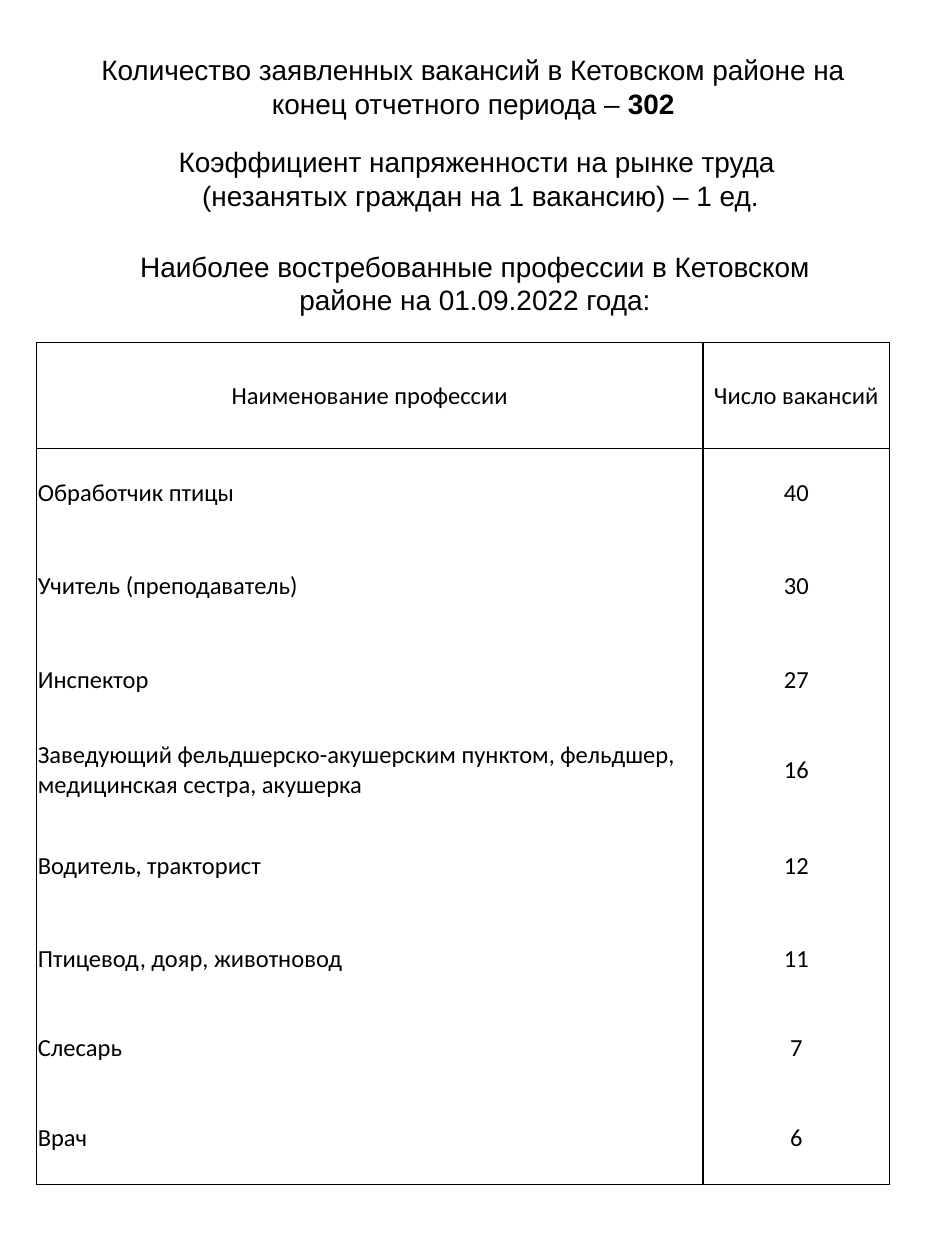
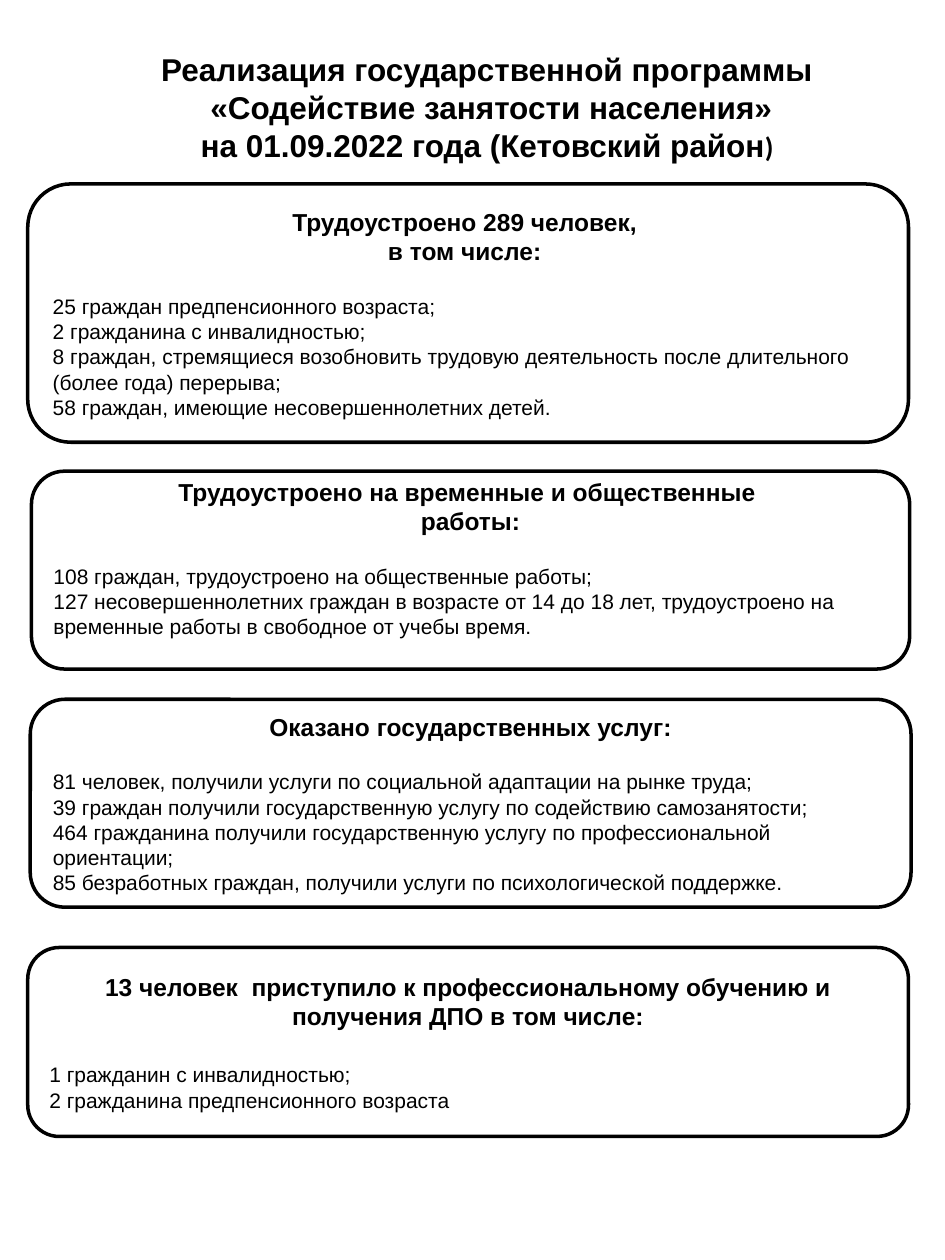
from pptx import Presentation
from pptx.dml.color import RGBColor
from pptx.enum.shapes import MSO_SHAPE
from pptx.enum.text import MSO_ANCHOR, MSO_AUTO_SIZE, PP_ALIGN
from pptx.oxml.ns import qn
from pptx.util import Inches, Pt
from lxml.etree import SubElement

BLACK = RGBColor(0x00, 0x00, 0x00)
WHITE = RGBColor(0xFF, 0xFF, 0xFF)

presentation = Presentation()
presentation.slide_width = Inches(7.5)
presentation.slide_height = Inches(10)
title_only = presentation.slide_layouts[5]

# Grid of 75 columns by 100 rows
COLUMN = presentation.slide_width // 75
ROW = presentation.slide_height // 100


def place(shape, column, row, columns, rows):
    shape.left, shape.top = int(column * COLUMN), int(row * ROW)
    shape.width, shape.height = int(columns * COLUMN), int(rows * ROW)
    text_frame = shape.text_frame
    text_frame.word_wrap = True
    text_frame.auto_size = MSO_AUTO_SIZE.NONE
    text_frame.vertical_anchor = MSO_ANCHOR.TOP
    return text_frame


def write(text_frame, index, alignment, runs):
    """Fill paragraph number index with (text, size, bold, font) runs."""
    paragraph = text_frame.paragraphs[0] if index == 0 else text_frame.add_paragraph()
    paragraph.alignment = alignment
    for text, size, bold, font in runs:
        run = paragraph.add_run()
        run.text = text
        run.font.size = Pt(size)
        run.font.bold = bold
        run.font.name = font
        run.font.color.rgb = BLACK
    return paragraph


# Slide 1: vacancies
slide = presentation.slides.add_slide(title_only)
title_frame = place(slide.shapes.title, 4.5, 3.7, 66.1, 6.4)
write(title_frame, 0, PP_ALIGN.CENTER, [
    ("Количество заявленных вакансий в Кетовском районе на конец отчетного периода – ",
     16, False, "Arial"),
    ("302", 16, True, "Arial"),
])

# Statements under the title
statements = [
    ((2.2, 11, 71.9, 6.4), ["Коэффициент напряженности на рынке труда ",
                            "(незанятых граждан на 1 вакансию) – 1 ед."]),
    ((7.8, 19.3, 59.8, 6.4), ["Наиболее востребованные профессии в Кетовском районе "
                              "на 01.09.2022 года:"]),
]
for area, lines in statements:
    statement_frame = place(slide.shapes.add_textbox(0, 0, COLUMN, ROW), *area)
    for index, line in enumerate(lines):
        write(statement_frame, index, PP_ALIGN.CENTER, [(line, 16, False, "Arial")])

# Table of professions
professions = [
    ("Наименование профессии", "Число вакансий", 8.4),
    ("Обработчик птицы", "40", 7),
    ("Учитель (преподаватель)", "30", 7.8),
    ("Инспектор", "27", 7),
    ("Заведующий фельдшерско-акушерским пунктом, фельдшер, медицинская сестра, акушерка",
     "16", 7.4),
    ("Водитель, тракторист", "12", 7.8),
    ("Птицевод, дояр, животновод", "11", 7),
    ("Слесарь", "7", 7),
    ("Врач", "6", 7.4),
]
last = len(professions) - 1
table_rows = sum(rows for _, _, rows in professions)
table = slide.shapes.add_table(
    len(professions), 2, int(2.9 * COLUMN), int(27.2 * ROW),
    int(67.7 * COLUMN), int(table_rows * ROW)).table
table.first_row = False
table.horz_banding = False
table.columns[0].width = int(52.9 * COLUMN)
table.columns[1].width = int(14.8 * COLUMN)

for row_index, (profession, vacancies, rows) in enumerate(professions):
    table.rows[row_index].height = int(rows * ROW)
    for column_index, text in enumerate((profession, vacancies)):
        cell = table.cell(row_index, column_index)
        cell.margin_left = cell.margin_right = cell.margin_top = Inches(0.01)
        cell.margin_bottom = 0
        cell.vertical_anchor = MSO_ANCHOR.MIDDLE
        centred = row_index == 0 or column_index == 1
        write(cell.text_frame, 0, PP_ALIGN.CENTER if centred else PP_ALIGN.LEFT,
              [(text, 14, False, "Calibri")])

        # Frame, header line and column lines only
        visible = {"a:lnL": True, "a:lnR": True,
                   "a:lnT": row_index <= 1, "a:lnB": row_index in (0, last)}
        properties = cell._tc.get_or_add_tcPr()
        for side, shown in visible.items():
            border = SubElement(properties, qn(side), w=str(Pt(1)))
            if shown:
                fill = SubElement(border, qn("a:solidFill"))
                SubElement(fill, qn("a:srgbClr"), val=str(BLACK))
            else:
                SubElement(border, qn("a:noFill"))
        cell.fill.background()

# Slide 2: employment programme
slide = presentation.slides.add_slide(title_only)
title_frame = place(slide.shapes.title, 5.2, 3.5, 66.9, 10.1)
title_lines = [
    [("Реализация государственной программы", 18, True, "Arial")],
    [(" «Содействие занятости населения»", 18, True, "Arial")],
    [("на 01.09.2022 года (Кетовский район", 18, True, "Arial"),
     (")", 16, True, "Calibri")],
]
for index, runs in enumerate(title_lines):
    write(title_frame, index, PP_ALIGN.CENTER, runs)

# Result cards: area, gap before the list, extra space at the bottom, heading, list
cards = [
    ((2.2, 14.6, 69.9, 20.5), 16, 0,
     ["Трудоустроено 289 человек, ", "в том числе: "],
     ["25 граждан предпенсионного возраста;",
      "2 гражданина с инвалидностью;",
      "8 граждан, стремящиеся возобновить трудовую деятельность после длительного "
      "(более года) перерыва;",
      "58 граждан, имеющие несовершеннолетних детей."]),
    ((2.5, 37.4, 69.7, 15.7), 16, 14,
     ["Трудоустроено на временные и общественные ", "работы:"],
     ["108 граждан, трудоустроено на общественные работы;",
      "127 несовершеннолетних граждан в возрасте от 14 до 18 лет, трудоустроено на "
      "временные работы в свободное от учебы время."]),
    ((2.4, 55.5, 69.9, 16.5), 16, 0,
     ["Оказано государственных услуг:"],
     ["81 человек, получили услуги по социальной адаптации на рынке труда;",
      "39 граждан получили государственную услугу по содействию самозанятости;",
      "464 гражданина получили государственную услугу по профессиональной ориентации;",
      "85 безработных граждан, получили услуги по психологической поддержке."]),
    ((2.2, 75.2, 69.9, 15), 18, 0,
     ["13 человек  приступило к профессиональному обучению и получения ДПО "
      "в том числе:"],
     ["1 гражданин с инвалидностью;",
      "2 гражданина предпенсионного возраста"]),
]
for area, gap, bottom_space, heading, results in cards:
    card = slide.shapes.add_shape(MSO_SHAPE.ROUNDED_RECTANGLE, 0, 0, COLUMN, ROW)
    card.shadow.inherit = False
    card.fill.solid()
    card.fill.fore_color.rgb = WHITE
    card.line.color.rgb = BLACK
    card.line.width = Pt(2)
    card_frame = place(card, *area)
    card_frame.vertical_anchor = MSO_ANCHOR.MIDDLE
    card_frame.margin_bottom = Inches(0.05) + Pt(bottom_space)
    for index, line in enumerate(heading):
        write(card_frame, index, PP_ALIGN.CENTER, [(line, 14, True, "Arial")])
    for index, line in enumerate(results):
        paragraph = write(card_frame, len(heading) + index, PP_ALIGN.LEFT,
                          [(line, 12, False, "Arial")])
        if index == 0:
            paragraph.space_before = Pt(gap)

presentation.save("out.pptx")
